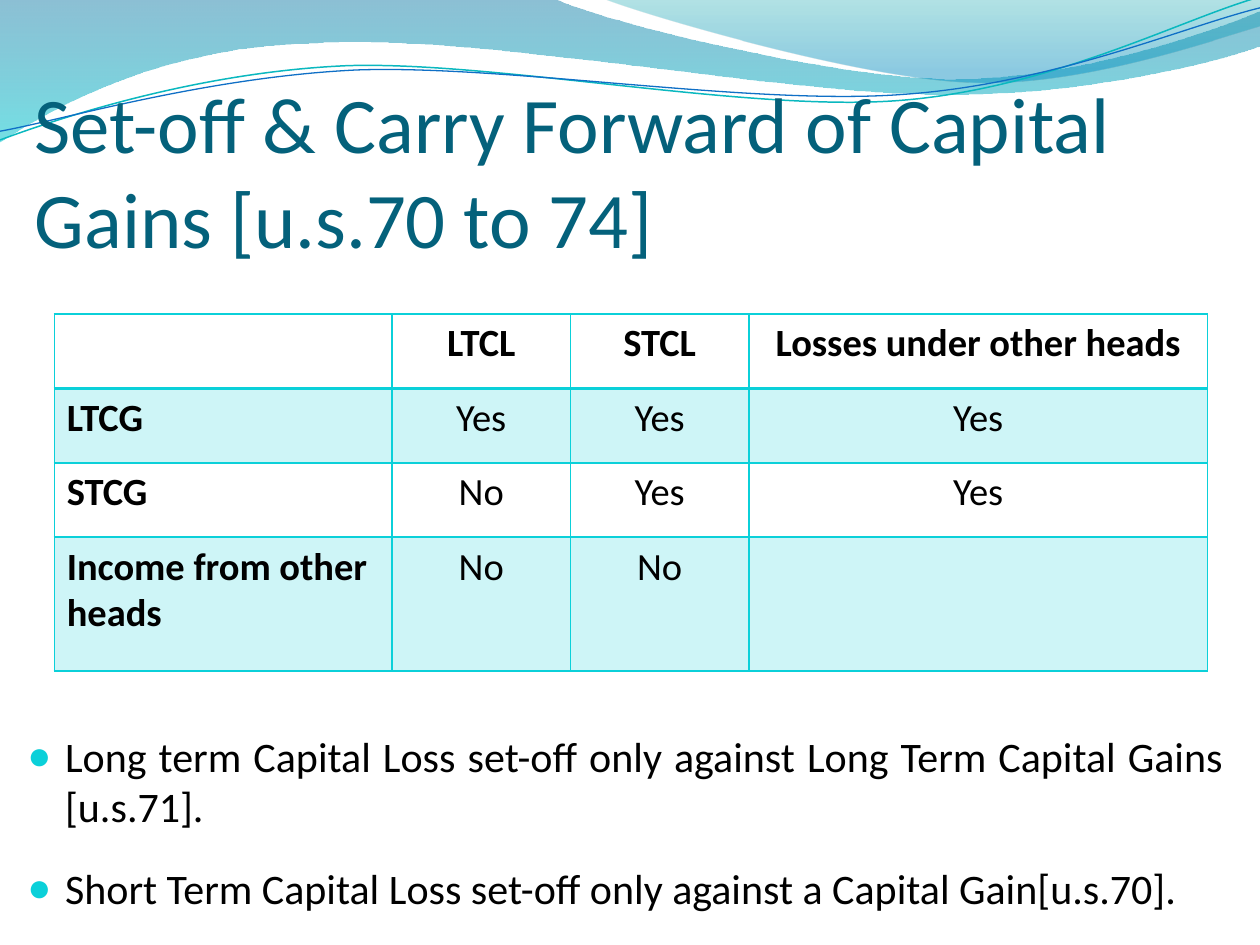
import math
import lxml.etree
import pptx
import pptx.util
import pptx.dml.color
import pptx.enum.text
import pptx.oxml
import pptx.oxml.ns

Pt = pptx.util.Pt
RGB = pptx.dml.color.RGBColor
ALIGN = pptx.enum.text.PP_ALIGN
ANCHOR = pptx.enum.text.MSO_ANCHOR
qn = pptx.oxml.ns.qn
NS = pptx.oxml.ns.nsdecls("a")

FONT = "Calibri"
BLACK = RGB(0x00, 0x00, 0x00)
TITLE = RGB(0x04, 0x61, 0x7B)
CYAN = RGB(0x0B, 0xD0, 0xD9)
TEAL = RGB(0x0A, 0xB8, 0xBF)
BLUE = RGB(0x0F, 0x6F, 0xC6)
WAVE_TOP = RGB(0x00, 0x74, 0xA1)
WAVE_END = RGB(0x00, 0xC6, 0xCF)
CREST_TOP = RGB(0x00, 0xA1, 0xA9)
CREST_END = RGB(0x00, 0x8B, 0xBF)

# Each step holds one end point (a straight side) or three points (a cubic curve).
WAVE = [[(0, 0)], [(317, -0.7)],
        [(343, 12), (478, 45), (546, 45)], [(614, 45), (690, 19), (720, 6.5)],
        [(721, 26)], [(708, 32), (626, 55), (537, 54)],
        [(447, 54), (275, 20), (185, 24.5)], [(93, 26), (33, 60), (-0.7, 81.5)]]
CREST = [[(345, -0.7)], [(366, 8), (491, 45), (554, 47)],
         [(616, 50), (692, 23), (720, 15)], [(720, 0)]]
TEAL_LINE = [[(0, 80)], [(35, 67), (114, 41), (199, 37.5)],
             [(284, 35), (427, 64), (513, 57.5)], [(600, 51), (675, 11), (719, -1.5)]]
BLUE_LINE = [[(0, 75)], [(34, 69), (118, 44), (204, 40)],
             [(290, 37), (430, 60.5), (516, 54)], [(602, 48), (677, 15), (720, 4.5)]]
TILT = -2.7

COLS = [193, 102, 102, 262]
ROWS = [42.5, 42.5, 42.5, 76.5]
CELLS = [["", "LTCL", "STCL", "Losses under other heads"],
         ["LTCG", "Yes", "Yes", "Yes"],
         ["STCG", "No", "Yes", "Yes"],
         ["Income from other heads", "No", "No", ""]]
POINTS = ["Long term Capital Loss set-off only against Long Term Capital Gains [u.s.71].",
          "Short Term Capital Loss set-off only against a Capital Gain[u.s.70]."]


def add_curve(slide, steps, close):
    """Draw through every point, then join each group of three into one curve."""
    first, *rest = [(Pt(x), Pt(y)) for step in steps for x, y in step]
    pen = slide.shapes.build_freeform(*first)
    pen.add_line_segments(rest, close=close)
    shape = pen.convert_to_shape()
    shape.shadow.inherit = False
    outline = next(shape._element.iter(qn("a:path")))
    sides = iter(list(outline)[1:])
    for step in steps[1:]:
        group = [next(sides) for _ in step]
        if len(group) == 3:
            curve = lxml.etree.Element(qn("a:cubicBezTo"))
            group[0].addprevious(curve)
            for side in group:
                curve.append(side[0])
                outline.remove(side)
    return shape


def set_alpha(color, percent):
    color.append(pptx.oxml.parse_xml(f'<a:alpha {NS} val="{percent * 1000}"/>'))


def add_wave(slide, steps, stops):
    """Fill an outline from top to bottom; a stop is (position, colour, opacity)."""
    shape = add_curve(slide, steps, True)
    shape.line.fill.background()
    shape.fill.gradient()
    shape.fill.gradient_angle = 270
    for stop, (spot, color, _) in zip(shape.fill.gradient_stops, stops):
        stop.position = spot
        stop.color.rgb = color
    for color, stop in zip(shape._element.iter(qn("a:srgbClr")), stops):
        set_alpha(color, stop[2])


def turn(point, pivot, angle):
    x, y = point[0] - pivot[0], point[1] - pivot[1]
    cos, sin = math.cos(math.radians(angle)), math.sin(math.radians(angle))
    return pivot[0] + x * cos - y * sin, pivot[1] + x * sin + y * cos


def add_line(slide, steps, pivot, color, width):
    """Lay the curve level and tilt the shape, so that it ends on its points."""
    level = [[turn(point, pivot, -TILT) for point in step] for step in steps]
    shape = add_curve(slide, level, False)
    shape.rotation = TILT
    shape.fill.background()
    shape.line.color.rgb = color
    shape.line.width = Pt(width)


def add_run(para, text, size, color, bold=False):
    run = para.add_run()
    run.text = text
    run.font.name = FONT
    run.font.size = Pt(size)
    run.font.color.rgb = color
    run.font.bold = bold


def place(slide, holder, box, insets, anchor):
    """Move a placeholder, bring it to the front and return its text frame."""
    holder.left, holder.top, holder.width, holder.height = map(Pt, box)
    slide.shapes._spTree.append(holder._element)
    frame = holder.text_frame
    frame.auto_size = pptx.enum.text.MSO_AUTO_SIZE.NONE
    frame.word_wrap = True
    frame.vertical_anchor = anchor
    (frame.margin_left, frame.margin_top,
     frame.margin_right, frame.margin_bottom) = map(Pt, insets)
    return frame


def add_title(slide, text):
    frame = place(slide, slide.shapes.title, (19.8, 49, 648, 102), (0, 3.6, 0, 0),
                  ANCHOR.BOTTOM)
    para = frame.paragraphs[0]
    para.alignment = ALIGN.LEFT
    add_run(para, text, 45, TITLE)


def add_bullet(para):
    props = para._p.get_or_add_pPr()
    props.set("marL", str(Pt(21.6)))
    props.set("indent", str(-Pt(21.6)))
    for xml in (f'<a:buClr {NS}><a:srgbClr val="{CYAN}"/></a:buClr>',
                f'<a:buSzPct {NS} val="95000"/>', f'<a:buChar {NS} char="●"/>'):
        props.append(pptx.oxml.parse_xml(xml))


def add_list(slide, texts):
    frame = place(slide, slide.placeholders[1], (8.4, 417.4, 698, 113),
                  (7.2, 0, 7.2, 3.6), ANCHOR.TOP)
    for i, text in enumerate(texts):
        para = frame.add_paragraph() if i else frame.paragraphs[0]
        para.alignment = ALIGN.JUSTIFY
        para.space_before = Pt(18 if i else 0)
        add_bullet(para)
        add_run(para, text, 24, BLACK)


def add_edge(cell, side, width):
    cell._tc.get_or_add_tcPr().append(pptx.oxml.parse_xml(
        f'<a:ln{side} {NS} w="{Pt(width)}"><a:solidFill>'
        f'<a:srgbClr val="{CYAN}"/></a:solidFill></a:ln{side}>'))


def fill_cell(cell, text, row, col):
    for side in "LRTB":
        thick = (row, side) in ((0, "B"), (1, "T"))
        add_edge(cell, side, 2 if thick else 1)
    if row % 2:
        cell.fill.solid()
        cell.fill.fore_color.rgb = CYAN
        set_alpha(cell._tc.tcPr.find(qn("a:solidFill"))[0], 20)
    else:
        cell.fill.background()
    if text:
        para = cell.text_frame.paragraphs[0]
        para.alignment = ALIGN.CENTER if col else ALIGN.LEFT
        add_run(para, text, 22, BLACK, row == 0 or col == 0)


def add_grid(slide):
    table = slide.shapes.add_table(len(ROWS), len(COLS), Pt(31), Pt(179.5),
                                   Pt(sum(COLS)), Pt(sum(ROWS))).table
    table.horz_banding = False
    table.first_row = False
    for col, width in zip(table.columns, COLS):
        col.width = Pt(width)
    for r, texts in enumerate(CELLS):
        table.rows[r].height = Pt(ROWS[r])
        for c, text in enumerate(texts):
            fill_cell(table.cell(r, c), text, r, c)


def main():
    deck = pptx.Presentation()
    deck.slide_width, deck.slide_height = Pt(720), Pt(540)
    slide = deck.slides.add_slide(deck.slide_layouts[1])
    add_wave(slide, WAVE, [(0, WAVE_TOP, 45), (1, WAVE_END, 55)])
    add_wave(slide, CREST, [(0, CREST_TOP, 30), (0.8, CREST_END, 45)])
    add_line(slide, TEAL_LINE, (359.3, 41.4), TEAL, 0.85)
    add_line(slide, BLUE_LINE, (359.6, 42.5), BLUE, 0.75)
    add_title(slide, "Set-off & Carry Forward of Capital Gains [u.s.70 to 74]")
    add_grid(slide)
    add_list(slide, POINTS)
    deck.save("out.pptx")


if __name__ == "__main__":
    main()
